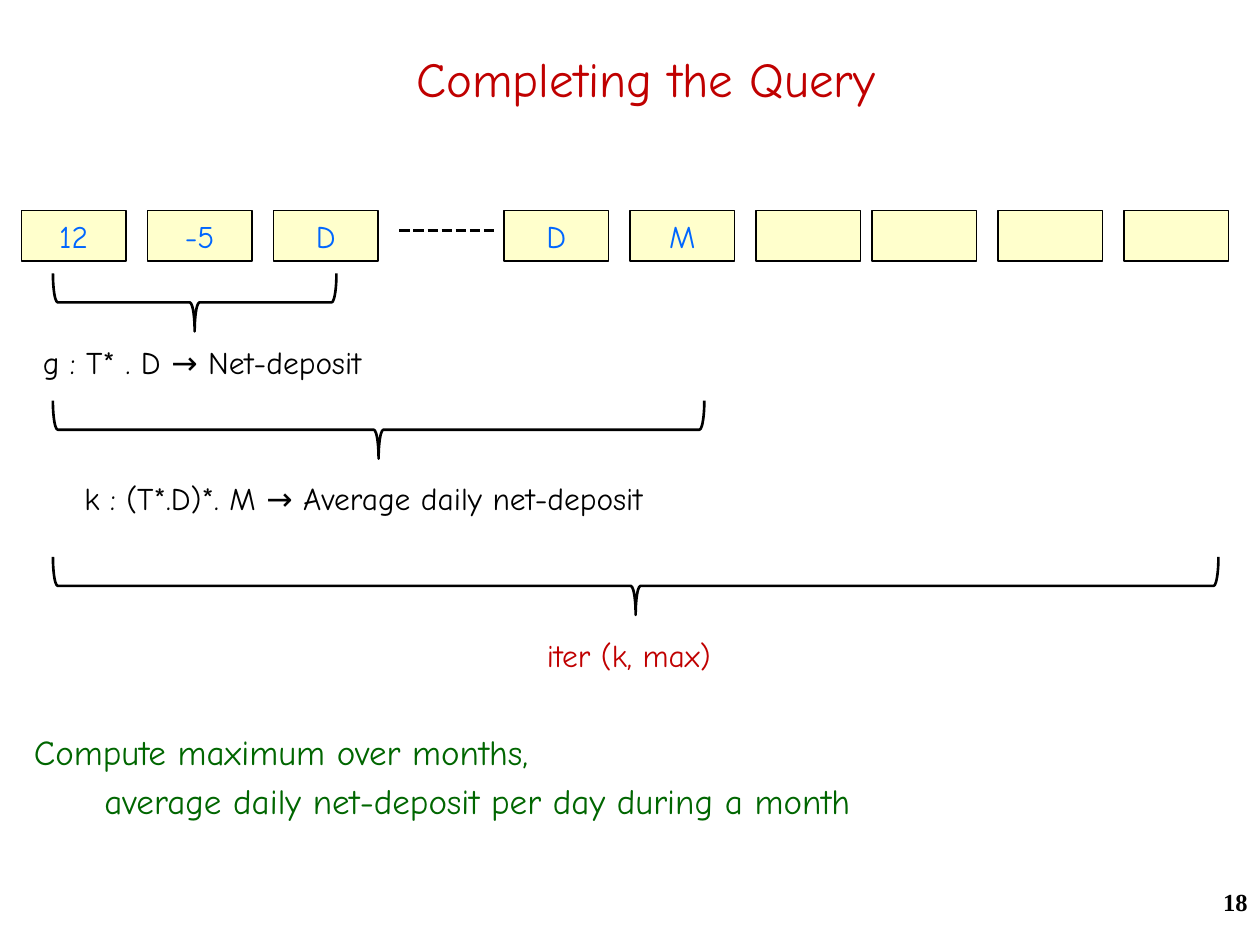
from lxml import etree
from pptx import Presentation
from pptx import util as u
from pptx.dml.color import RGBColor
from pptx.enum import dml, shapes, text
from pptx.oxml.ns import qn

COLORS = {"title": "C00000", "black": "000000", "cell": "FFFFCC",
          "item": "0066FF", "goal": "006600"}
FONT = "Comic Neue"

CELL_GROUPS = [(0.17, ["12", "-5", "D"]), (4, ["D", "M", ""]), (6.92, ["", "", ""])]
CELL_TOP, CELL_WIDTH, CELL_HEIGHT, CELL_STEP = 1.67, 0.83, 0.4, 1
GAP_LINE = (3.17, 3.92, 1.83)

BRACE_LEFT, BRACE_DEPTH = 0.42, 0.46
BRACES = [(2.17, 2.25), (3.18, 5.17), (4.42, 9.25)]

LABELS = [
    ("g : T* . D → Net-deposit", 0.17, 2.67, 3.17, "black"),
    ("k : (T*.D)*. M → Average daily net-deposit", 0.5, 3.75, 5.33, "black"),
    ("iter (k, max)", 4.17, 5, 1.74, "title"),
]
LABEL_INSET = 0.17

GOAL = [("Compute maximum over months,", 0),
        ("average daily net-deposit per day during a month", 0.56)]


def color(name):
    return RGBColor.from_string(COLORS[name])


def set_text(shape, content, size, color_name, align=text.PP_ALIGN.LEFT, font=FONT, bold=False):
    frame = shape.text_frame
    frame.word_wrap = True
    frame.text = content
    for paragraph in frame.paragraphs:
        paragraph.alignment = align
        for run in paragraph.runs:
            run.font.name = font
            run.font.size = u.Pt(size)
            run.font.bold = bold
            run.font.color.rgb = color(color_name)
    return frame


def add_text(slide, box, *args, **options):
    shape = slide.shapes.add_textbox(*map(u.Inches, box))
    return set_text(shape, *args, **options)


def add_outlined(slide, kind, box, width):
    shape = slide.shapes.add_shape(kind, *map(u.Inches, box))
    shape.shadow.inherit = False
    shape.line.color.rgb = color("black")
    shape.line.width = u.Pt(width)
    return shape


def add_cell(slide, left, content):
    box = (left, CELL_TOP, CELL_WIDTH, CELL_HEIGHT)
    cell = add_outlined(slide, shapes.MSO_SHAPE.RECTANGLE, box, 1)
    cell.fill.solid()
    cell.fill.fore_color.rgb = color("cell")
    if content:
        set_text(cell, content, 18, "item", text.PP_ALIGN.CENTER)


def add_brace(slide, top, span):
    left = BRACE_LEFT + (span - BRACE_DEPTH) / 2
    box = (left, top - (span - BRACE_DEPTH) / 2, BRACE_DEPTH, span)
    brace = add_outlined(slide, shapes.MSO_SHAPE.LEFT_BRACE, box, 1.5)
    brace.fill.background()
    brace.rotation = 270


def add_gap_line(slide, start, end, top):
    line = slide.shapes.add_connector(shapes.MSO_CONNECTOR.STRAIGHT, u.Inches(start),
                                      u.Inches(top), u.Inches(end), u.Inches(top))
    line.line.color.rgb = color("black")
    line.line.width = u.Pt(2)
    line.line.dash_style = dml.MSO_LINE.SQUARE_DOT
    etree.SubElement(line._element.spPr, qn("a:effectLst"))


def main():
    presentation = Presentation()
    presentation.slide_width, presentation.slide_height = u.Inches(10), u.Inches(7.5)
    slide = presentation.slides.add_slide(presentation.slide_layouts[6])

    title = add_text(slide, (0.25, 0.33, 9.75, 0.58), "Completing the Query", 28, "title",
                     text.PP_ALIGN.CENTER)
    title.vertical_anchor = text.MSO_ANCHOR.MIDDLE
    add_text(slide, (7.92, 6.99, 2.08, 0.5), "18", 14, "black", text.PP_ALIGN.RIGHT,
             font="Times New Roman", bold=True)

    for group_left, contents in CELL_GROUPS:
        for index, content in enumerate(contents):
            add_cell(slide, group_left + index * CELL_STEP, content)
    add_gap_line(slide, *GAP_LINE)

    for top, span in BRACES:
        add_brace(slide, top, span)
    for content, left, top, width, color_name in LABELS:
        label = add_text(slide, (left, top, width, 0.4), content, 18, color_name)
        label.margin_left = u.Inches(LABEL_INSET)

    goal = add_text(slide, (0.17, 5.75, 9.62, 1), "\n".join(line for line, _ in GOAL), 20, "goal")
    for paragraph, (_, indent) in zip(goal.paragraphs, GOAL):
        paragraph.space_before = u.Pt(4)
        properties = paragraph._p.get_or_add_pPr()
        properties.set("marL", str(u.Inches(indent)))
        properties.set("indent", "0")

    presentation.save("out.pptx")


if __name__ == "__main__":
    main()
